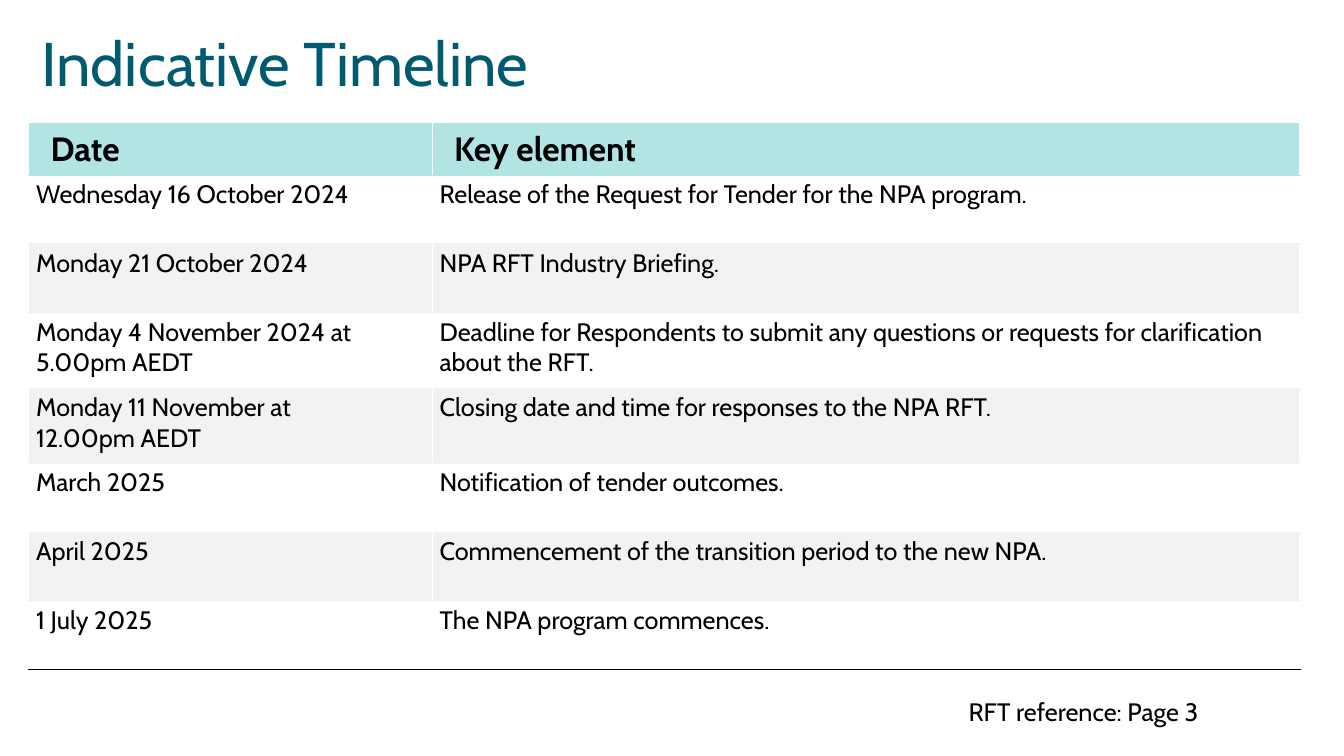
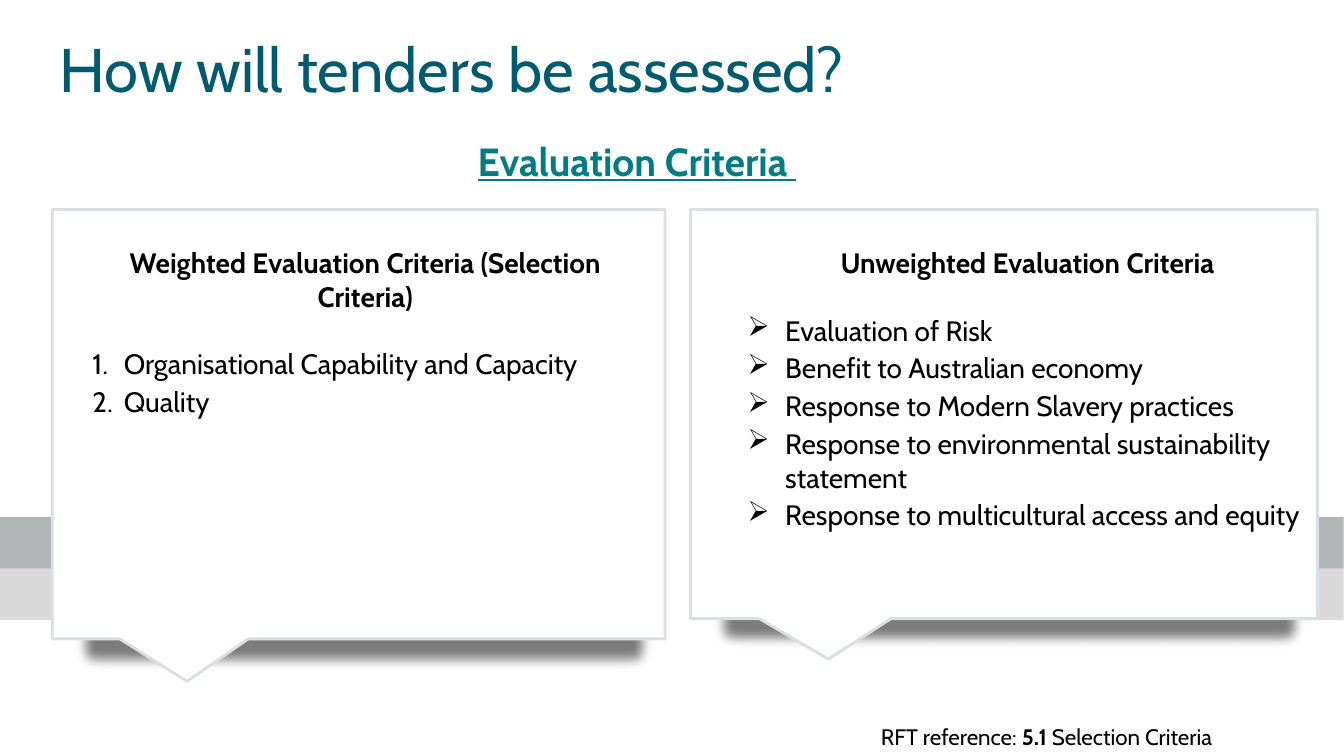
"""Build the two tender briefing slides: timeline and assessment criteria."""
from dataclasses import dataclass

from lxml import etree
from pptx import Presentation
from pptx import util as u
from pptx.dml.color import RGBColor
from pptx.enum import shapes, text
from pptx.oxml import ns

FONT = "Cabin"
BLACK = RGBColor(0x00, 0x00, 0x00)
WHITE = RGBColor(0xFF, 0xFF, 0xFF)
TITLE_BLUE = RGBColor(0x00, 0x5A, 0x70)
TEAL = RGBColor(0x00, 0x7C, 0x82)
HEADER_AQUA = RGBColor(0xB1, 0xE4, 0xE3)
STRIPE_GREY = RGBColor(0xF2, 0xF2, 0xF2)
DARK_BAND = RGBColor(0xB3, 0xB6, 0xB7)
LIGHT_BAND = RGBColor(0xD9, 0xD9, 0xD9)
CARD_EDGE = RGBColor(0xD9, 0xE0, 0xE4)
SHADE = RGBColor(0x0D, 0x0D, 0x0D)
SHADE_OPACITY = "54000"
SOFT_EDGE = "127000"


@dataclass(frozen=True)
class Area:
    """A rectangle in centimetres."""
    left: float
    top: float
    width: float
    height: float

    def emu(self) -> list[u.Length]:
        """Return the rectangle as lengths."""
        return [u.Cm(v) for v in (self.left, self.top, self.width, self.height)]

    def portion(self, x: float, y: float, width: float, height: float) -> "Area":
        """Return the area at the given fractions of this one."""
        return Area(self.left + x * self.width, self.top + y * self.height,
                    width * self.width, height * self.height)


@dataclass(frozen=True)
class Milestone:
    """A date and what happens on it."""
    date: str
    event: str


@dataclass(frozen=True)
class CriteriaCard:
    """A callout with a heading and a list."""
    outline: Area
    body: Area
    heading: str
    criteria: tuple[str, ...]
    bullet: tuple[str, str, str]
    hanging: float


MILESTONES = (
    Milestone("Wednesday 16 October 2024",
              "Release of the Request for Tender for the NPA program."),
    Milestone("Monday 21 October 2024", "NPA RFT Industry Briefing."),
    Milestone("Monday 4 November 2024 at 5.00pm AEDT",
              "Deadline for Respondents to submit any questions or requests "
              "for clarification about the RFT."),
    Milestone("Monday 11 November at\n12.00pm AEDT",
              "Closing date and time for responses to the NPA RFT."),
    Milestone("March 2025", "Notification of tender outcomes."),
    Milestone("April 2025", "Commencement of the transition period to the new NPA."),
    Milestone("1 July 2025", "The NPA program commences."),
)
ROW_HEIGHTS = (1.3, 1.73, 1.73, 1.9, 1.9, 1.73, 1.73, 1.73)
COLUMN_WIDTHS = (10.17, 21.87)

CARDS = (
    CriteriaCard(
        Area(1.32, 5.28, 15.44, 11.89), Area(2.08, 6.07, 14.25, 4.65),
        "Weighted Evaluation Criteria (Selection Criteria)",
        ("Organisational Capability and Capacity", "Quality"),
        ("buAutoNum", "type", "arabicPeriod"), 0.79),
    CriteriaCard(
        Area(17.4, 5.28, 15.8, 11.33), Area(18.59, 6.07, 14.61, 8.38),
        "Unweighted Evaluation Criteria",
        ("Evaluation of Risk", "Benefit to Australian economy",
         "Response to Modern Slavery practices",
         "Response to environmental sustainability statement",
         "Response to multicultural access and equity"),
        ("buChar", "char", "➢"), 0.95),
)
CALLOUT_POINTS = ((1, 0), (1, 0.91), (0.32, 0.91), (0.22, 1), (0.11, 0.91), (0, 0.91))


def add_element(parent, tag: str, **attributes: str):
    """Append a DrawingML child element."""
    return etree.SubElement(parent, ns.qn(f"a:{tag}"), attributes)


def write(frame, content: str, *, size: float, color=BLACK, bold=False,
          underline=False, align=None, emphasis="", bullet=None, indent=0.0,
          hanging=0.0, after=0.0) -> None:
    """Add one formatted paragraph; the emphasised words are set bold."""
    paragraph = frame.add_paragraph() if frame.text else frame.paragraphs[0]
    properties = paragraph._p.get_or_add_pPr()
    if indent or hanging:
        properties.set("marL", str(u.Cm(indent + hanging)))
        properties.set("indent", str(-u.Cm(hanging)))
    if bullet:
        tag, key, value = bullet
        add_element(properties, tag, **{key: value})
    paragraph.alignment = align
    paragraph.space_after = u.Pt(after)
    pieces = content.partition(emphasis) if emphasis else (content,)
    for piece in filter(None, pieces):
        for number, line in enumerate(piece.split("\n")):
            if number:
                paragraph.add_line_break()
            run = paragraph.add_run()
            run.text = line
            font = run.font
            font.name, font.size = FONT, u.Pt(size)
            font.bold = bold or piece == emphasis
            font.underline = underline
            font.color.rgb = color


def add_box(slide, area: Area):
    """Add a wrapping text box and return its text frame."""
    frame = slide.shapes.add_textbox(*area.emu()).text_frame
    frame.word_wrap = True
    return frame


def add_title(slide, area: Area, title: str) -> None:
    """Add a bottom-anchored slide title without insets."""
    frame = add_box(slide, area)
    frame.margin_left = frame.margin_right = frame.margin_top = frame.margin_bottom = 0
    frame.vertical_anchor = text.MSO_ANCHOR.BOTTOM
    write(frame, title, size=44, color=TITLE_BLUE)


def add_block(slide, area: Area, color: RGBColor):
    """Add a plain filled rectangle."""
    block = slide.shapes.add_shape(shapes.MSO_SHAPE.RECTANGLE, *area.emu())
    block.shadow.inherit = False
    block.fill.solid()
    block.fill.fore_color.rgb = color
    block.line.fill.background()
    return block


def style_cell(cell, fill: RGBColor, top: RGBColor, bottom: RGBColor) -> None:
    """Fill a cell and draw its four borders."""
    cell.fill.solid()
    cell.fill.fore_color.rgb = fill
    properties = cell._tc.get_or_add_tcPr()
    edges = (("lnL", WHITE), ("lnR", WHITE), ("lnT", top), ("lnB", bottom))
    for position, (tag, color) in enumerate(edges):
        border = add_element(properties, tag, w=str(u.Pt(1)))
        add_element(add_element(border, "solidFill"), "srgbClr", val=str(color))
        properties.insert(position, border)


def add_timeline(slide) -> None:
    """Add the table of dates and key elements."""
    area = Area(0.72, 3.12, sum(COLUMN_WIDTHS), sum(ROW_HEIGHTS))
    table = slide.shapes.add_table(
        len(ROW_HEIGHTS), len(COLUMN_WIDTHS), *area.emu()).table
    table.horz_banding = False
    for column, width in zip(table.columns, COLUMN_WIDTHS):
        column.width = u.Cm(width)
    for row, height in zip(table.rows, ROW_HEIGHTS):
        row.height = u.Cm(height)
    for column, label in enumerate(("Date", "Key element")):
        cell = table.cell(0, column)
        style_cell(cell, HEADER_AQUA, HEADER_AQUA, HEADER_AQUA)
        write(cell.text_frame, label, size=24, bold=True, indent=0.3)
    for row, milestone in enumerate(MILESTONES, start=1):
        fill = WHITE if row % 2 else STRIPE_GREY
        top = HEADER_AQUA if row == 1 else STRIPE_GREY
        bottom = BLACK if row == len(MILESTONES) else STRIPE_GREY
        for column, content in enumerate((milestone.date, milestone.event)):
            cell = table.cell(row, column)
            cell.margin_left = cell.margin_right = u.Cm(0.19)
            cell.margin_top = cell.margin_bottom = u.Cm(0.1)
            style_cell(cell, fill, top, bottom)
            write(cell.text_frame, content, size=18)


def add_card(slide, card: CriteriaCard) -> None:
    """Add a callout outline over its soft shade."""
    shade = add_block(slide, card.outline.portion(0.026, 0.844, 0.965, 0.145), SHADE)
    shade_properties = shade._element.spPr
    color = shade_properties.find(f".//{ns.qn('a:srgbClr')}")
    add_element(color, "alpha", val=SHADE_OPACITY)
    effects = shade_properties.find(ns.qn("a:effectLst"))
    add_element(effects, "softEdge", rad=SOFT_EDGE)

    left, top, width, height = card.outline.emu()
    builder = slide.shapes.build_freeform(left, top)
    builder.add_line_segments(
        [(left + round(x * width), top + round(y * height)) for x, y in CALLOUT_POINTS])
    callout = builder.convert_to_shape()
    callout.shadow.inherit = False
    callout.fill.solid()
    callout.fill.fore_color.rgb = WHITE
    callout.line.color.rgb = CARD_EDGE
    callout.line.width = u.Pt(2)


def add_criteria(slide, card: CriteriaCard) -> None:
    """Add a card's heading and list."""
    frame = add_box(slide, card.body)
    write(frame, card.heading, size=20, bold=True, align=text.PP_ALIGN.CENTER, after=24)
    for criterion in card.criteria:
        write(frame, criterion, size=20, bullet=card.bullet,
              hanging=card.hanging, after=3)


def build_timeline_slide(slide) -> None:
    """Build the timeline slide."""
    add_timeline(slide)
    add_title(slide, Area(1.04, 0.61, 21.87, 1.88), "Indicative Timeline")
    write(add_box(slide, Area(24.16, 17.42, 7.34, 1.07)),
          "RFT reference: Page 3", size=18)


def build_assessment_slide(slide) -> None:
    """Build the assessment slide."""
    for top, color in ((14.33, LIGHT_BAND), (13.03, DARK_BAND)):
        for left, width in ((0, 13.77), (20.78, 13.08)):
            add_block(slide, Area(left, top, width, 1.3), color)
    add_title(slide, Area(1.5, 0.76, 22.15, 1.88), "How will tenders be assessed?")
    for card in CARDS:
        add_card(slide, card)
        add_criteria(slide, card)
    write(add_box(slide, Area(11.79, 3.33, 10.34, 1.45)), "Evaluation Criteria ",
          size=28, color=TEAL, bold=True, underline=True)
    write(add_box(slide, Area(21.95, 18.11, 9.86, 0.94)),
          "RFT reference: 5.1 Selection Criteria", size=16, emphasis="5.1 ")


def main() -> None:
    """Create and save the presentation."""
    deck = Presentation()
    deck.slide_width, deck.slide_height = u.Cm(33.87), u.Cm(19.05)
    for build in (build_timeline_slide, build_assessment_slide):
        build(deck.slides.add_slide(deck.slide_layouts[6]))
    deck.save("out.pptx")


if __name__ == "__main__":
    main()
